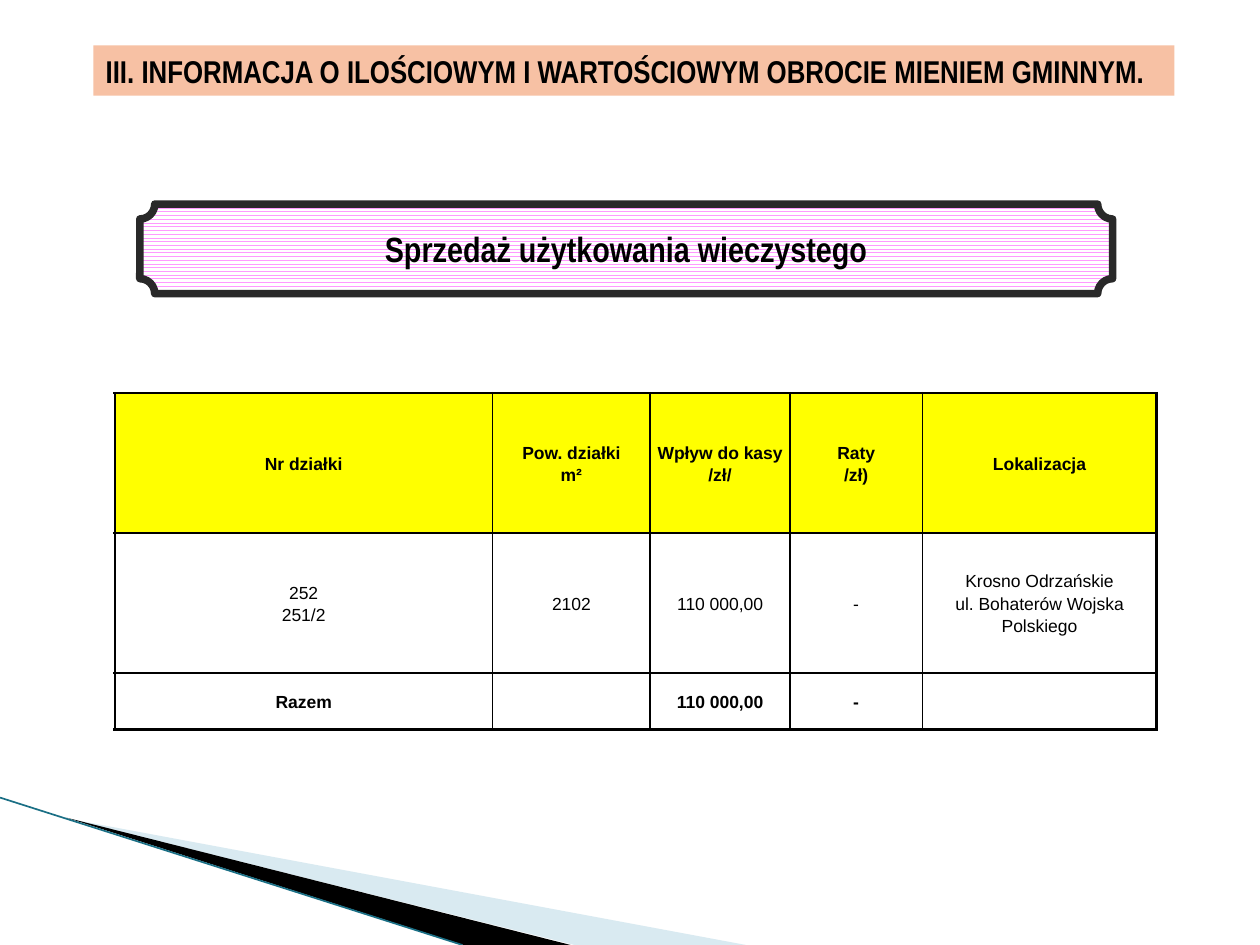
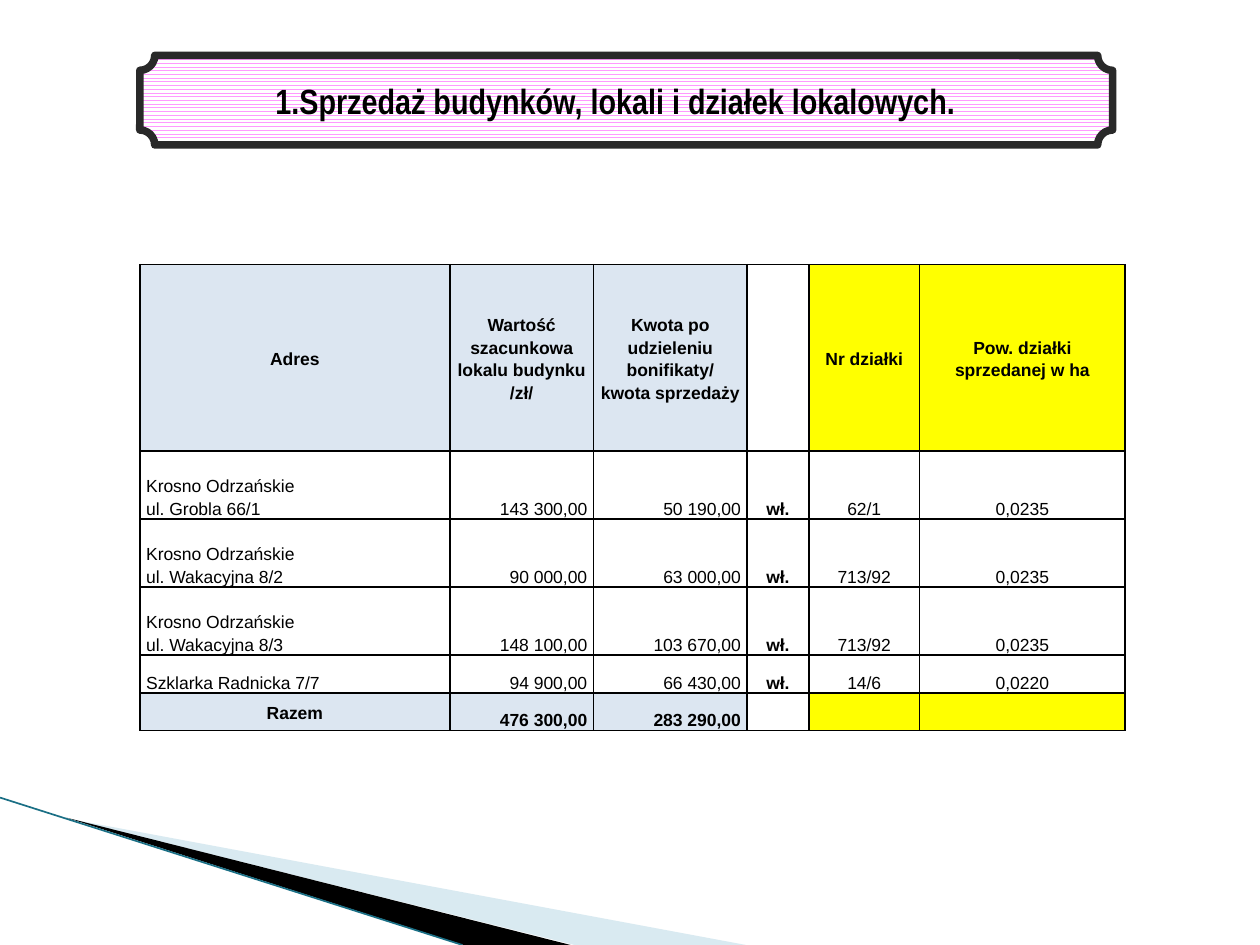
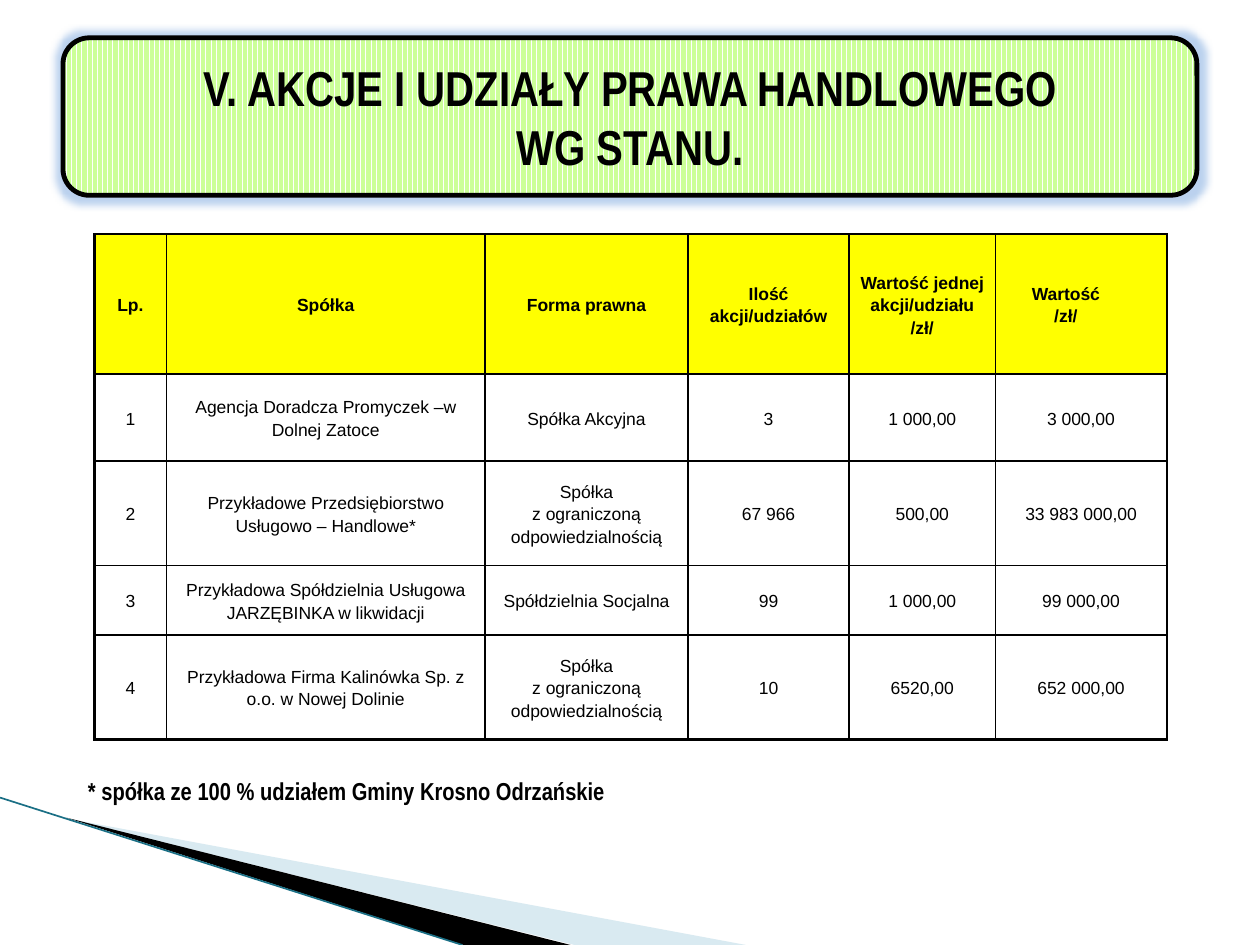
from dataclasses import dataclass

from lxml.etree import SubElement as Sub
from pptx import Presentation
from pptx.dml.color import RGBColor as Rgb
from pptx.enum.dml import MSO_PATTERN as Pattern
from pptx.enum.shapes import MSO_CONNECTOR as Link, MSO_SHAPE as Shape
from pptx.enum.text import MSO_ANCHOR as Anchor, PP_ALIGN as Align
from pptx.oxml.ns import qn
from pptx.util import Inches, Pt


@dataclass(frozen=True)
class Theme:
    """Colours, fonts and type sizes of the deck."""
    black: str = "000000"
    white: str = "FFFFFF"
    peach: str = "F7C1A4"
    pink: str = "FF99FF"
    lime: str = "CCFF99"
    frame: str = "292929"
    glow: str = "558ED5"
    yellow: str = "FFFF00"
    pale: str = "DCE6F1"
    wedge: str = "A0CBDC"
    teal: str = "1A6F85"
    body: str = "Arial"
    head: str = "Arial Narrow"
    cell: int = 10
    note: int = 14
    band: int = 18
    plaque: int = 20
    title: int = 28


T = Theme()


def rgb(color):
    """Turn a hex string into a colour."""
    return Rgb.from_string(color)


def inch(*values):
    """Turn numbers into lengths in inches."""
    return [Inches(value) for value in values]


def write(frame, text, size, font=T.head, bold=True, align=Align.LEFT, space=None):
    """Write one paragraph per line of text."""
    frame.word_wrap = True
    for i, line in enumerate(text.split("\n")):
        para = frame.add_paragraph() if i else frame.paragraphs[0]
        para.alignment = align
        para.line_spacing = space
        if line:
            run = para.add_run()
            run.text = line
            run.font.size, run.font.name, run.font.bold = Pt(size), font, bold
            run.font.color.rgb = rgb(T.black)
        else:
            Sub(para._p, qn("a:endParaRPr")).set("sz", str(size * 100))


def tint(parent, color, alpha):
    """Add a partly transparent colour to an XML element."""
    node = Sub(parent, qn("a:srgbClr"), val=color)
    Sub(node, qn("a:alpha"), val=str(alpha * 1000))


def wedge(slide, box, foot, color, alpha=100):
    """Draw a triangle from the top left of a box to its base."""
    x, y, w, h = box
    pen = slide.shapes.build_freeform(*inch(x, y))
    pen.add_line_segments([inch(x + w, y + h), inch(x + foot, y + h)])
    form = pen.convert_to_shape()
    form.shadow.inherit = False
    form.line.fill.background()
    form.fill.solid()
    form.fill.fore_color.rgb = rgb(color)
    if alpha < 100:
        fill = form._element.spPr.find(qn("a:solidFill"))
        fill.clear()
        tint(fill, color, alpha)


def corner(slide, box):
    """Draw the swoosh in the lower left corner."""
    x, y, w, h = box
    wedge(slide, (x + 0.55, y + 0.17, w - 0.55, h - 0.17), 4.01, T.wedge, 40)
    wedge(slide, (x + 0.53, y + 0.16, 4, h - 0.16), 3.15, T.black)
    edge = slide.shapes.add_connector(Link.STRAIGHT, *inch(x, y, x + 3.67, y + h))
    edge.line.color.rgb = rgb(T.teal)
    edge.line.width = Pt(0.95)
    Sub(edge._element.spPr, qn("a:effectLst"))


def panel(slide, kind, box, text, size, align=Align.CENTER):
    """Add a preset shape with a heading in it."""
    shape = slide.shapes.add_shape(kind, *inch(*box))
    shape.shadow.inherit = False
    shape.line.fill.background()
    shape.text_frame.vertical_anchor = Anchor.MIDDLE
    write(shape.text_frame, text, size, align=align)
    return shape


def hatch(shape, pattern, color, line, width):
    """Give a shape a pattern fill and a heavy outline."""
    shape.fill.patterned()
    shape.fill.pattern = pattern
    shape.fill.fore_color.rgb = rgb(color)
    shape.fill.back_color.rgb = rgb(T.white)
    shape.line.color.rgb = rgb(line)
    shape.line.width = Pt(width)


def band(slide, box, text):
    """Add the chapter heading on a plain band."""
    shape = panel(slide, Shape.RECTANGLE, box, text, T.band, Align.LEFT)
    shape.fill.solid()
    shape.fill.fore_color.rgb = rgb(T.peach)


def plaque(slide, box, text, inset=0.1):
    """Add a section heading on a pink plaque."""
    shape = panel(slide, Shape.PLAQUE, box, text, T.plaque)
    shape.text_frame.margin_right = Inches(inset)
    hatch(shape, Pattern.ZIG_ZAG, T.pink, T.frame, 4.33)


def banner(slide, box, text):
    """Add a large heading on a glowing green banner."""
    shape = panel(slide, Shape.ROUNDED_RECTANGLE, box, text, T.title)
    hatch(shape, Pattern.DARK_VERTICAL, T.lime, T.black, 2.75)
    effects = shape._element.spPr.find(qn("a:effectLst"))
    tint(Sub(effects, qn("a:glow"), rad=str(Inches(0.11))), T.glow, 40)


def border(cell, widths):
    """Draw the left, right, top and bottom lines of a cell."""
    props = cell._tc.get_or_add_tcPr()
    for side, width in zip("LRTB", widths):
        line = Sub(props, qn(f"a:ln{side}"), w=str(Pt(width)))
        fill = Sub(line, qn("a:solidFill"))
        Sub(fill, qn("a:srgbClr"), val=T.black)


def grid(slide, spot, cols, rows, data, look, pad=0.05, rim=1.5, base=1.5, strong=None):
    """Add a table whose cell formats come from look(row, column)."""
    size = (sum(cols), sum(rows))
    table = slide.shapes.add_table(len(rows), len(cols), *inch(*spot, *size)).table
    table.first_row = table.horz_banding = False
    for col, width in zip(table.columns, cols):
        col.width = Inches(width)
    for row, height in zip(table.rows, rows):
        row.height = Inches(height)
    for r, line in enumerate(data):
        for c, text in enumerate(line):
            cell = table.cell(r, c)
            style = {"fill": None, "anchor": Anchor.MIDDLE, "align": Align.CENTER, "bold": r == 0}
            style.update(look(r, c))
            inner = rim if c == strong else 1
            border(cell, (rim if c == 0 else 1,
                          rim if c == len(cols) - 1 else 1,
                          rim if r == 0 else inner,
                          base if r == len(rows) - 1 else inner))
            if style["fill"]:
                cell.fill.solid()
                cell.fill.fore_color.rgb = rgb(style["fill"])
            else:
                cell.fill.background()
            cell.margin_left = cell.margin_right = Inches(pad)
            cell.margin_top = cell.margin_bottom = 0
            cell.vertical_anchor = style["anchor"]
            write(cell.text_frame, text, T.cell, font=T.body, bold=style["bold"],
                  align=style["align"], space=1.15)
    return table


def lease(slide, box):
    """Fill the slide on the sale of perpetual usufruct."""
    x, y, w, h = box
    band(slide, (x + 0.74, y + 0.36, 8.58, 0.4),
         "III. INFORMACJA O ILOŚCIOWYM I WARTOŚCIOWYM OBROCIE MIENIEM GMINNYM.")
    data = [
        ["Nr działki", "Pow. działki\nm²", "Wpływ do kasy\n/zł/", "Raty\n/zł)", "Lokalizacja"],
        ["252\n251/2", "2102", "110 000,00", "-",
         "Krosno Odrzańskie\nul. Bohaterów Wojska Polskiego"],
        ["Razem", "", "110 000,00", "-", ""],
    ]
    grid(slide, (x + 0.91, y + 3.12), [3, 1.25, 1.11, 1.05, 1.86], [1.11, 1.11, 0.45], data,
         lambda r, c: {"fill": None if r else T.yellow, "bold": r != 1}, base=2.25, strong=4)
    plaque(slide, (x + 1.11, y + 1.62, 7.72, 0.71), "Sprzedaż użytkowania wieczystego")


def sale(slide, box):
    """Fill the slide on the sale of buildings and flats."""
    x, y, w, h = box
    plaque(slide, (x + 1.11, y + 0.44, 7.72, 0.71),
           "1.Sprzedaż budynków, lokali i działek lokalowych.", inset=0.27)
    data = [
        ["Adres", "Wartość szacunkowa lokalu budynku\n/zł/",
         "Kwota po udzieleniu bonifikaty/ kwota sprzedaży", "",
         "Nr działki", "Pow. działki sprzedanej w ha"],
        ["Krosno Odrzańskie\nul. Grobla 66/1", "143 300,00", "50 190,00", "wł.", "62/1", "0,0235"],
        ["Krosno Odrzańskie\nul. Wakacyjna 8/2", "90 000,00", "63 000,00", "wł.", "713/92", "0,0235"],
        ["Krosno Odrzańskie\nul. Wakacyjna 8/3", "148 100,00", "103 670,00", "wł.", "713/92", "0,0235"],
        ["Szklarka Radnicka 7/7", "94 900,00", "66 430,00", "wł.", "14/6", "0,0220"],
        ["Razem", "476 300,00", "283 290,00", "", "", ""],
    ]
    last = len(data) - 1
    fills = [T.pale] * 3 + [None] + [T.yellow] * 2
    sides = [Align.LEFT] + [Align.RIGHT] * 2 + [Align.CENTER] * 3

    def look(r, c):
        """Mark the header, the total row and the ownership column."""
        mid = r == 0 or (r, c) == (last, 0)
        return {"fill": fills[c] if r in (0, last) else None,
                "bold": r in (0, last) or c == 3,
                "align": Align.CENTER if mid else sides[c],
                "anchor": Anchor.MIDDLE if mid else Anchor.BOTTOM}

    grid(slide, (x + 1.11, y + 2.1), [2.46, 1.14, 1.22, 0.49, 0.88, 1.63],
         [1.48] + [0.54] * 3 + [0.3] * 2, data, look, rim=1, base=1)


def stake(slide, box):
    """Fill the slide on shares held in companies."""
    x, y, w, h = box
    banner(slide, (x + 0.5, y + 0.3, 9, 1.25), "V. AKCJE I UDZIAŁY PRAWA HANDLOWEGO\nWG STANU.")
    note = slide.shapes.add_textbox(*inch(x + 0.6, y + 6.11, 8.5, 0.34))
    write(note.text_frame, "* spółka ze 100 % udziałem Gminy Krosno Odrzańskie", T.note)
    limited = "Spółka\nz ograniczoną odpowiedzialnością"
    data = [
        ["Lp.", "Spółka", "Forma prawna", "Ilość akcji/udziałów",
         "Wartość jednej akcji/udziału\n/zł/", "Wartość\n/zł/"],
        ["1", "Agencja Doradcza Promyczek –w Dolnej Zatoce", "Spółka Akcyjna",
         "3", "1 000,00", "3 000,00"],
        ["2", "Przykładowe Przedsiębiorstwo Usługowo – Handlowe*", limited,
         "67 966", "500,00", "33 983 000,00"],
        ["3", "Przykładowa Spółdzielnia Usługowa JARZĘBINKA w likwidacji", "Spółdzielnia Socjalna",
         "99", "1 000,00", "99 000,00"],
        ["4", "Przykładowa Firma Kalinówka Sp. z o.o. w Nowej Dolinie", limited,
         "10", "6520,00", "652 000,00"],
    ]
    table = grid(slide, (x + 0.75, y + 1.86), [0.57, 2.53, 1.61, 1.28, 1.16, 1.36],
                 [1.11, 0.69, 0.83, 0.55, 0.83], data,
                 lambda r, c: {"fill": None if r else T.yellow}, pad=0.07)
    value = table.cell(0, 5).text_frame.paragraphs[0]
    value._p.get_or_add_pPr().set("marR", str(Inches(0.24)))


def main():
    """Build the deck and save it."""
    deck = Presentation()
    wide, high = 10, 7.5
    deck.slide_width, deck.slide_height = inch(wide, high)
    for fill in (lease, sale, stake):
        slide = deck.slides.add_slide(deck.slide_layouts[6])
        corner(slide, (0, 6.33, 5.92, 1.17))
        fill(slide, (0, 0, wide, high))
    deck.save("out.pptx")


if __name__ == "__main__":
    main()
